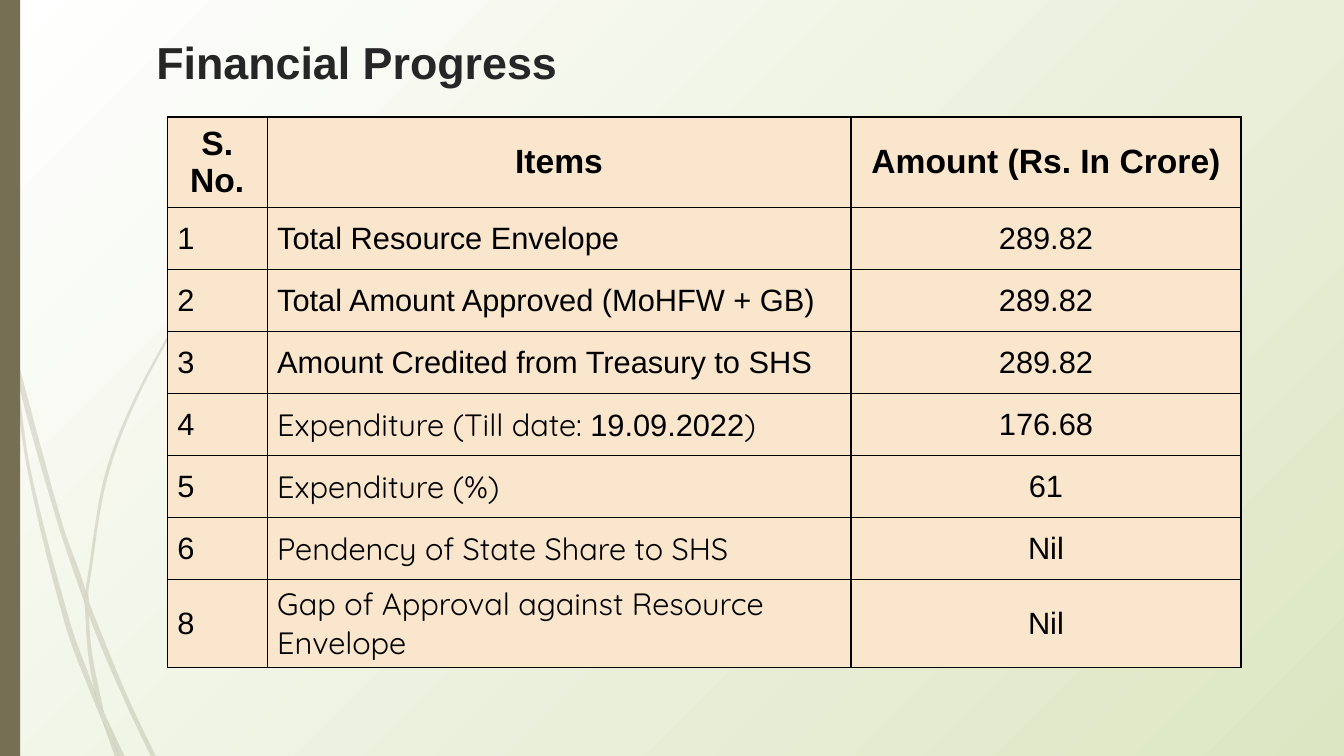
from math import dist
from lxml.etree import SubElement
from pptx import Presentation
from pptx.dml.color import RGBColor
from pptx.enum.shapes import MSO_SHAPE
from pptx.enum.text import MSO_ANCHOR, PP_ALIGN
from pptx.oxml import parse_xml
from pptx.oxml.ns import nsdecls, qn
from pptx.util import Inches, Pt

TITLE = "Financial Progress"
HEADER = ("S. No.", "Items", "Amount (Rs. In Crore)")
# Each item is a list of (text, font) runs.
BODY_FONT, ITEM_FONT = "Arial", "Quicksand"
ROWS = [
    ("1", [("Total Resource Envelope", BODY_FONT)], "289.82"),
    ("2", [("Total Amount Approved (MoHFW + GB)", BODY_FONT)], "289.82"),
    ("3", [("Amount Credited from Treasury to SHS", BODY_FONT)], "289.82"),
    ("4", [("Expenditure (Till date: ", ITEM_FONT), ("19.09.2022", BODY_FONT),
           (")", ITEM_FONT)], "176.68"),
    ("5", [("Expenditure (%)", ITEM_FONT)], "61"),
    ("6", [("Pendency of State Share to SHS", ITEM_FONT)], "Nil"),
    ("8", [("Gap of Approval against Resource Envelope", ITEM_FONT)], "Nil"),
]
COLUMN_WIDTHS = (0.99, 5.79, 3.87)
ROW_HEIGHTS = (0.9, *[3.69 / 6] * 6, 0.87)
HEADER_FORMAT = {"size": Pt(24), "bold": True}
BODY_FORMAT = {"size": Pt(22), "bold": False}

# Outlines of the pieces of grass, as (x, y) in inches.
GRASS = [
    [(0.11, 3.5), (0.09, 3.22), (0, 2.82), (0, 2.99), (0.1, 3.44)],
    [(0.58, 5.22), (0.84, 5.99), (0.85, 5.86), (0.62, 5.2), (0.14, 3.45), (0.17, 3.76)],
    [(0.92, 6.07), (0.88, 5.96), (0.88, 6.1), (1.23, 6.94), (1.5, 7.51), (1.55, 7.51),
     (1.27, 6.92)],
    [(1.19, 7.51), (1.24, 7.51), (1.05, 7.11)],
    [(0.93, 6.83), (0.7, 6.19), (0.31, 4.69), (0.17, 3.76), (0.11, 3.5), (0.28, 4.7),
     (0.65, 6.21), (0.92, 6.93), (1.01, 7.14), (0.99, 7.07)],
    [(0.84, 5.99), (0.87, 6.46), (0.93, 6.83), (0.96, 6.92), (1.05, 7.11), (1.03, 7.06),
     (0.91, 6.46), (0.88, 6.1), (0.88, 6.08)],
    [(0.88, 5.84), (1.1, 4.62), (1.6, 3.49), (2.29, 2.45), (2.68, 1.98), (2.9, 1.75),
     (3.12, 1.54), (3.12, 1.53), (2.89, 1.75), (2.68, 1.97), (2.28, 2.44), (1.58, 3.48),
     (1.07, 4.61), (0.85, 5.84), (0.85, 5.86), (0.88, 5.96)],
    [(1.01, 7.14), (1.14, 7.51), (1.19, 7.51)],
    [(0.88, 6.08), (0.88, 6.1), (0.88, 5.96), (0.85, 5.86), (0.84, 5.99)],
    [(0.96, 6.92), (0.93, 6.83), (0.99, 7.07), (1.01, 7.14), (1.19, 7.51), (1.05, 7.11)],
]
OLIVE, PEACH, BLACK, CHARCOAL = "766F54", "FAE5CD", "000000", "262626"
BACKGROUND = ("FFFFFF", "DDE6C3")


def color(value):
    return RGBColor.from_string(value)


def direction(start, end):
    length = dist(start, end)
    return (end[0] - start[0]) / length, (end[1] - start[1]) / length


def curve_points(outline):
    """Return two handles and an end point for each side of a closed outline.

    Gentle bends become smooth; sharp corners stay sharp.
    """
    count = len(outline)
    tangents = []
    for i, point in enumerate(outline):
        before, after = outline[i - 1], outline[(i + 1) % count]
        arriving, leaving = direction(before, point), direction(point, after)
        bend = sum(a * b for a, b in zip(arriving, leaving))
        shared = direction(before, after)
        tangents.append((shared, shared) if bend > 0.8 else (arriving, leaving))
    lows, highs = [[pick(axis) for axis in zip(*outline)] for pick in (min, max)]
    points = []
    for i, start in enumerate(outline):
        j = (i + 1) % count
        end = outline[j]
        reach = dist(start, end) / 3
        handles = ([p + reach * t for p, t in zip(start, tangents[i][1])],
                   [p - reach * t for p, t in zip(end, tangents[j][0])])
        for handle in handles:
            points.append([min(max(v, low), high)
                           for v, low, high in zip(handle, lows, highs)])
        points.append(end)
    return points


def bend_sides(shape):
    """Turn every three straight sides of a freeform into one curve."""
    sides = shape._element.spPr.findall(".//" + qn("a:lnTo"))
    for first in range(0, len(sides), 3):
        curve = parse_xml(f'<a:cubicBezTo {nsdecls("a")}/>')
        sides[first].addprevious(curve)
        for side in sides[first:first + 3]:
            curve.append(side[0])
            side.getparent().remove(side)


def paint_background(slide):
    fill = slide.background.fill
    fill.gradient()
    for stop, value, position in zip(fill.gradient_stops, BACKGROUND, (0, 1)):
        stop.color.rgb = color(value)
        stop.position = position
    line = slide.background._cSld.find(".//" + qn("a:lin"))
    line.getparent().replace(line, parse_xml(
        f'<a:path {nsdecls("a")} path="circle">'
        '<a:fillToRect r="100000" b="100000"/></a:path>'))


def paint_olive(shape):
    shape.shadow.inherit = False
    shape.fill.solid()
    shape.fill.fore_color.rgb = color(OLIVE)
    shape.line.fill.background()


def add_decoration(slide, height):
    meadow = slide.shapes.add_group_shape()
    for outline in GRASS:
        builder = meadow.shapes.build_freeform(*map(Inches, outline[0]))
        builder.add_line_segments(
            [(Inches(x), Inches(y)) for x, y in curve_points(outline)])
        blade = builder.convert_to_shape()
        bend_sides(blade)
        paint_olive(blade)
        tint = blade._element.spPr.find(".//" + qn("a:srgbClr"))
        SubElement(tint, qn("a:alpha"), val="20000")
    paint_olive(slide.shapes.add_shape(MSO_SHAPE.RECTANGLE, 0, 0, Inches(0.2), height))


def format_font(font, values, ink):
    for attribute, value in values.items():
        setattr(font, attribute, value)
    font.color.rgb = color(ink)


def add_title(slide):
    title = slide.shapes.title
    title.left, title.top, title.width, title.height = map(
        Inches, (1.45, 0.29, 11.23, 0.77))
    frame = title.text_frame
    frame.text = TITLE
    frame.vertical_anchor = MSO_ANCHOR.MIDDLE
    frame.margin_bottom = Inches(0.11)
    heading = frame.paragraphs[0]
    heading.alignment = PP_ALIGN.LEFT
    heading.line_spacing = 0.9
    format_font(heading.runs[0].font,
                {"name": BODY_FONT, "size": Pt(32), "bold": True}, CHARCOAL)


def fill_cell(cell, runs, values, centred):
    cell.fill.solid()
    cell.fill.fore_color.rgb = color(PEACH)
    cell.vertical_anchor = MSO_ANCHOR.MIDDLE
    for place, side in enumerate("LRTB"):
        cell._tc.get_or_add_tcPr().insert(place, parse_xml(
            f'<a:ln{side} {nsdecls("a")} w="12700"><a:solidFill>'
            f'<a:srgbClr val="{BLACK}"/></a:solidFill></a:ln{side}>'))
    paragraph = cell.text_frame.paragraphs[0]
    paragraph.alignment = PP_ALIGN.CENTER if centred else PP_ALIGN.LEFT
    for text, font_name in runs:
        run = paragraph.add_run()
        run.text = text
        format_font(run.font, {"name": font_name, **values}, BLACK)


def add_progress_table(slide):
    table = slide.shapes.add_table(
        len(ROW_HEIGHTS), len(COLUMN_WIDTHS), Inches(1.66), Inches(1.16),
        Inches(sum(COLUMN_WIDTHS)), Inches(sum(ROW_HEIGHTS))).table
    for column, width in zip(table.columns, COLUMN_WIDTHS):
        column.width = Inches(width)
    for row, height in zip(table.rows, ROW_HEIGHTS):
        row.height = Inches(height)
    for r, entries in enumerate([HEADER, *ROWS]):
        for c, entry in enumerate(entries):
            runs = [(entry, BODY_FONT)] if isinstance(entry, str) else entry
            fill_cell(table.cell(r, c), runs, BODY_FORMAT if r else HEADER_FORMAT,
                      centred=r == 0 or c == 2)


def main():
    deck = Presentation()
    deck.slide_width, deck.slide_height = Inches(13.33), Inches(7.5)
    slide = deck.slides.add_slide(deck.slide_layouts[5])
    paint_background(slide)
    add_decoration(slide, deck.slide_height)
    add_title(slide)
    add_progress_table(slide)
    deck.save("out.pptx")


if __name__ == "__main__":
    main()
